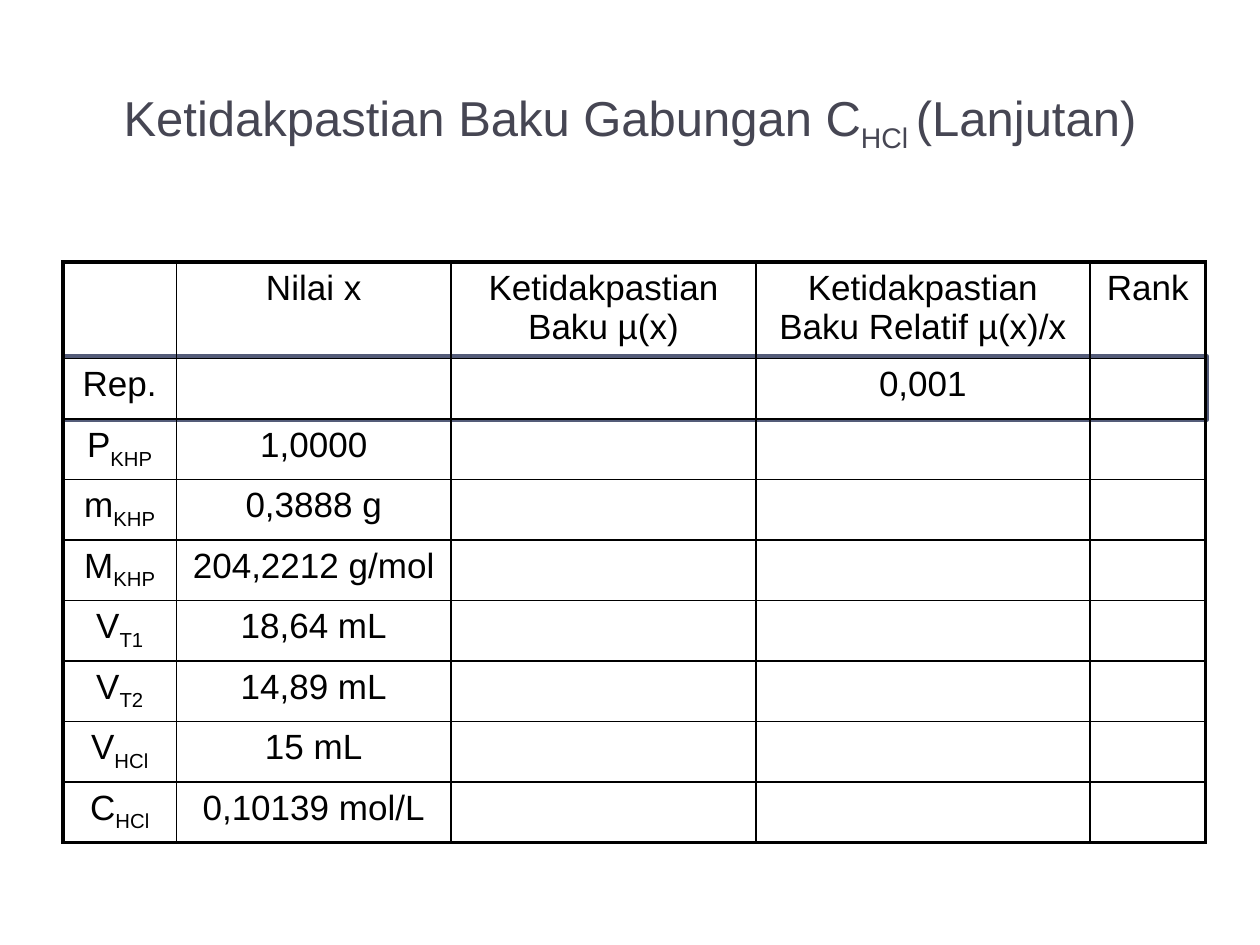
from lxml import etree
from pptx import Presentation
from pptx.dml.color import RGBColor
from pptx.enum.shapes import MSO_SHAPE
from pptx.enum.text import MSO_ANCHOR, PP_ALIGN
from pptx.oxml.ns import qn
from pptx.util import Inches, Pt

RECT = MSO_SHAPE.RECTANGLE
CENTER = PP_ALIGN.CENTER
MIDDLE = MSO_ANCHOR.MIDDLE

TITLE = "Ketidakpastian Baku Gabungan C_HCl _(Lanjutan)"
COLS = [0.9, 2.18, 2.42, 2.65, 0.92]
HEAD_H, ROW_H = 0.76, 0.48
MARKED = 1
ROWS = [
    ["", "Nilai x", "Ketidakpastian Baku µ(x)",
     "Ketidakpastian Baku Relatif µ(x)/x", "Rank"],
    ["Rep.", "", "", "0,001", ""],
    ["P_KHP", "1,0000"],
    ["m_KHP", "0,3888 g"],
    ["M_KHP", "204,2212 g/mol"],
    ["V_T1", "18,64 mL"],
    ["V_T2", "14,89 mL"],
    ["V_HCl", "15 mL"],
    ["C_HCl", "0,10139 mol/L"],
]


def color(code):
    return RGBColor.from_string(code)


class Deck:
    font = "Arial"
    ink = "000000"
    thin, thick = 1, 2.25

    def __init__(self, wide, high):
        self.prs = Presentation()
        self.prs.slide_width = Inches(wide)
        self.prs.slide_height = Inches(high)
        self.slide = self.prs.slides.add_slide(self.prs.slide_layouts[6])

    def label(self, para, text, size, code):
        """Fill a centred paragraph; every second part between "_" is a subscript."""
        para.alignment = CENTER
        for i, part in enumerate(text.split("_")):
            run = para.add_run()
            run.text = part
            run.font.name = self.font
            run.font.size = Pt(size)
            run.font.color.rgb = color(code)
            if i % 2:
                run._r.get_or_add_rPr().set("baseline", "-25000")

    def title(self, text, box, size, code):
        frame = self.slide.shapes.add_textbox(*map(Inches, box)).text_frame
        frame.word_wrap = True
        frame.vertical_anchor = MIDDLE
        self.label(frame.paragraphs[0], text, size, code)

    def band(self, box, fill, line, width):
        shape = self.slide.shapes.add_shape(RECT, *map(Inches, box))
        shape.shadow.inherit = False
        shape.fill.solid()
        shape.fill.fore_color.rgb = color(fill)
        shape.line.color.rgb = color(line)
        shape.line.width = Pt(width)

    def edge(self, cell, side, width):
        props = cell._tc.get_or_add_tcPr()
        line = etree.SubElement(props, qn(f"a:ln{side}"), w=str(Pt(width)))
        fill = etree.SubElement(line, qn("a:solidFill"))
        etree.SubElement(fill, qn("a:srgbClr"), val=self.ink)

    def table(self, rows, left, top, cols, heights, marked, size):
        """Draw a grid with a thick outer frame and one white row."""
        frame = self.slide.shapes.add_table(
            len(rows), len(cols), Inches(left), Inches(top),
            Inches(sum(cols)), Inches(sum(heights)))
        grid = frame.table
        grid.first_row = grid.horz_banding = False
        for col, wide in zip(grid.columns, cols):
            col.width = Inches(wide)
        for row, high in zip(grid.rows, heights):
            row.height = Inches(high)
        for r, texts in enumerate(rows):
            for c in range(len(cols)):
                cell = grid.cell(r, c)
                outer = {"L": c == 0, "R": c == len(cols) - 1,
                         "T": r == 0, "B": r == len(rows) - 1}
                for side, edge in outer.items():
                    self.edge(cell, side, self.thick if edge else self.thin)
                if r == marked:
                    cell.fill.solid()
                    cell.fill.fore_color.rgb = color("FFFFFF")
                else:
                    cell.fill.background()
                if c < len(texts) and texts[c]:
                    para = cell.text_frame.paragraphs[0]
                    para.space_before = Pt(size * 0.2)
                    self.label(para, texts[c], size, self.ink)


def main():
    deck = Deck(10, 7.5)
    deck.band((0.5, 2.83, 9.08, 0.5), "BFBFBF", "545C79", 2.75)
    deck.title(TITLE, (0.75, 0.42, 8.5, 1.08), 28, "464653")
    heights = [HEAD_H] + [ROW_H] * (len(ROWS) - 1)
    deck.table(ROWS, 0.5, 2.08, COLS, heights, MARKED, 20)
    deck.prs.save("out.pptx")


if __name__ == "__main__":
    main()
